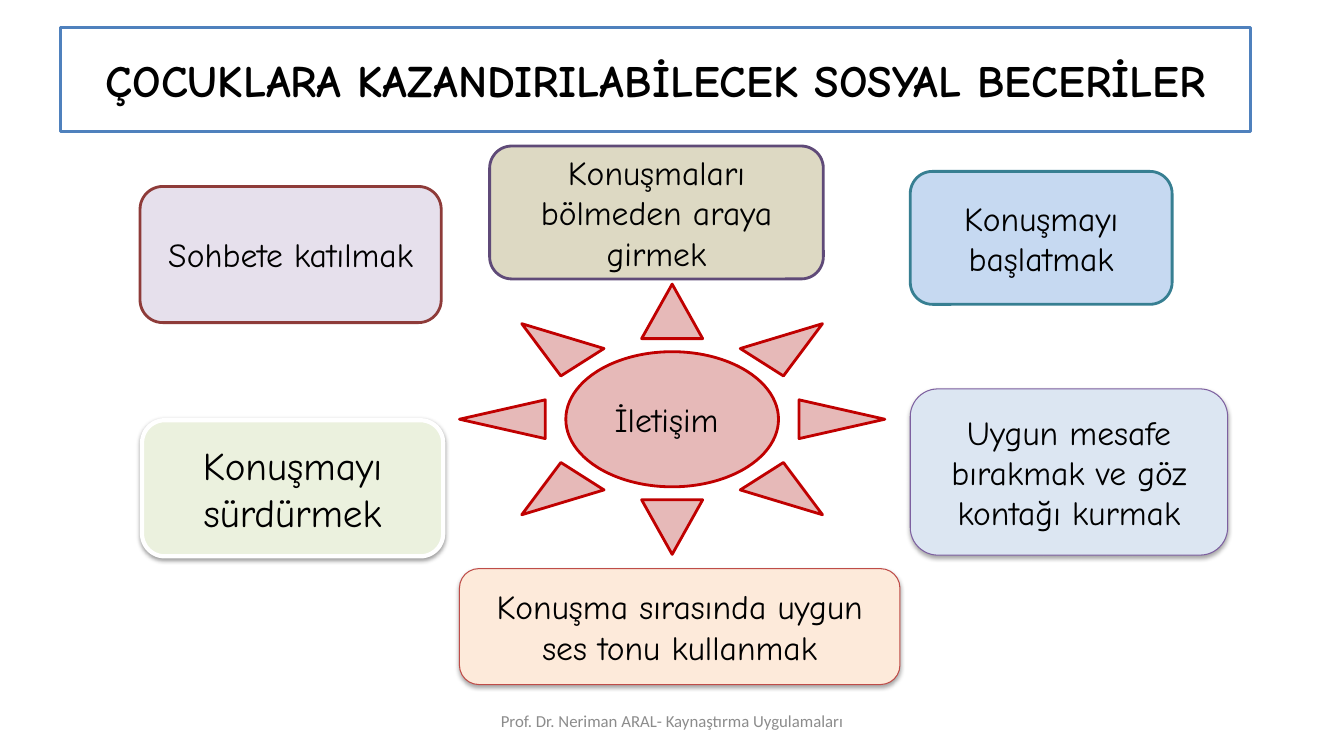
from dataclasses import dataclass

from lxml import etree
from pptx import Presentation
from pptx.dml.color import RGBColor
from pptx.enum.shapes import MSO_SHAPE
from pptx.enum.text import MSO_ANCHOR, MSO_AUTO_SIZE, PP_ALIGN
from pptx.oxml.ns import qn
from pptx.util import Cm, Pt

SUN = MSO_SHAPE.SUN
ROUNDED = MSO_SHAPE.ROUNDED_RECTANGLE
MIDDLE = MSO_ANCHOR.MIDDLE
CENTER = PP_ALIGN.CENTER
NO_AUTOFIT = MSO_AUTO_SIZE.NONE
TITLE_ONLY = 5


@dataclass(frozen=True)
class Theme:
    font: str = "Comic Neue"
    footer_font: str = "Calibri"
    title_size: int = 32
    large_size: int = 28
    body_size: int = 24
    footer_size: int = 12
    text: str = "000000"
    footer_text: str = "8C8C8C"
    title_colors: tuple = ("FFFFFF", "4F81BD")
    # Fill and line of each part
    sun: tuple = ("E6B9B8", "C00000")
    join: tuple = ("E6E0EC", "8E3B39")
    start: tuple = ("C6D9F1", "377F92")
    keep_going: tuple = ("EBF1DE", "FFFFFF")
    distance: tuple = ("DCE6F2", "7D60A0")
    interrupt: tuple = ("DDD9C3", "5F4A78")
    tone: tuple = ("FDEADA", "BF4C48")
    thin: float = 0.75
    medium: float = 2
    thick: float = 3
    shadow: str = "000000"


THEME = Theme()

# Text, place in cm (left, top, width, height), colours, line width, type size,
# shadow (opacity in percent, distance in points)
SKILLS = [
    ("Sohbete katılmak", (3.53, 4.7, 7.59, 3.43),
     THEME.join, THEME.medium, THEME.body_size, None),
    ("Konuşmayı başlatmak", (22.94, 4.32, 6.6, 3.35),
     THEME.start, THEME.medium, THEME.body_size, None),
    ("Konuşmayı sürdürmek", (3.58, 10.59, 7.59, 3.43),
     THEME.keep_going, THEME.thick, THEME.large_size, (38, 1.6)),
    ("Uygun mesafe bırakmak ve göz kontağı kurmak", (22.94, 9.8, 8, 4.19),
     THEME.distance, THEME.thin, THEME.body_size, (35, 1.8)),
    ("Konuşmaları bölmeden araya girmek", (12.34, 3.68, 8.41, 3.35),
     THEME.interrupt, THEME.medium, THEME.body_size, None),
    ("Konuşma sırasında uygun ses tonu kullanmak", (11.58, 14.33, 11.1, 2.92),
     THEME.tone, THEME.thin, THEME.body_size, (35, 1.8)),
]


def place(box):
    return [Cm(length) for length in box]


def paint(shape, colors, line_width):
    fill, line = colors
    shape.fill.solid()
    shape.fill.fore_color.rgb = RGBColor.from_string(fill)
    shape.line.color.rgb = RGBColor.from_string(line)
    shape.line.width = Pt(line_width)


def write(shape, text, size, font=THEME.font, color=THEME.text, bold=False):
    frame = shape.text_frame
    frame.text = text
    frame.word_wrap = True
    frame.auto_size = NO_AUTOFIT
    frame.vertical_anchor = MIDDLE
    paragraph = frame.paragraphs[0]
    paragraph.alignment = CENTER
    run_font = paragraph.runs[0].font
    run_font.name = font
    run_font.size = Pt(size)
    run_font.bold = bold
    run_font.color.rgb = RGBColor.from_string(color)


def cast_shadow(shape, opacity, distance):
    effects = shape._element.spPr.find(qn("a:effectLst"))
    shadow = etree.SubElement(
        effects, qn("a:outerShdw"), blurRad=str(Pt(3.1)), dist=str(Pt(distance)),
        dir=str(90 * 60000), rotWithShape="0")
    color = etree.SubElement(shadow, qn("a:srgbClr"), val=THEME.shadow)
    etree.SubElement(color, qn("a:alpha"), val=str(opacity * 1000))


def add_title(slide, text, box):
    title = slide.shapes.title
    title.left, title.top, title.width, title.height = place(box)
    paint(title, THEME.title_colors, THEME.medium)
    write(title, text, THEME.title_size, bold=True)


def add_figure(slide, kind, text, box, colors, line_width, size, shadow=None):
    figure = slide.shapes.add_shape(kind, *place(box))
    figure.shadow.inherit = False
    paint(figure, colors, line_width)
    write(figure, text, size)
    if shadow:
        cast_shadow(figure, *shadow)


def add_footer(slide, text, box):
    footer = slide.shapes.add_textbox(*place(box))
    write(footer, text, THEME.footer_size, THEME.footer_font, THEME.footer_text)


def main():
    prs = Presentation()
    prs.slide_width, prs.slide_height = Cm(33.87), Cm(19.05)
    slide = prs.slides.add_slide(prs.slide_layouts[TITLE_ONLY])

    # Title and footer
    add_title(slide, "ÇOCUKLARA KAZANDIRILABİLECEK SOSYAL BECERİLER",
              (1.52, 0.69, 30, 2.62))
    add_footer(slide, "Prof. Dr. Neriman ARAL- Kaynaştırma Uygulamaları",
               (11.58, 17.65, 10.72, 1.02))

    # Central topic
    add_figure(slide, SUN, "İletişim ", (11.58, 7.16, 10.72, 6.81),
               THEME.sun, THEME.medium, THEME.body_size)

    # Skills around it
    for skill in SKILLS:
        add_figure(slide, ROUNDED, *skill)

    prs.save("out.pptx")


if __name__ == "__main__":
    main()
